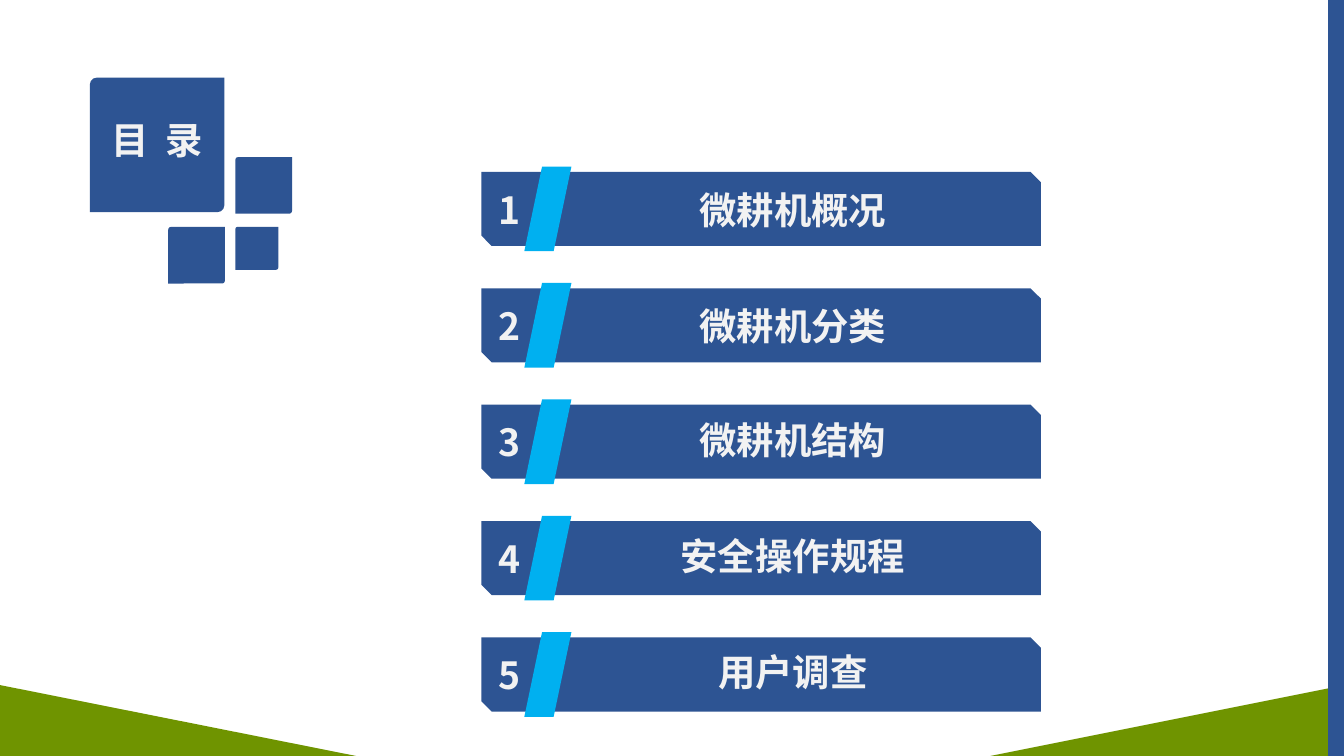
from lxml import etree
from pptx import Presentation
from pptx.dml.color import RGBColor
from pptx.enum.shapes import MSO_SHAPE
from pptx.enum.text import MSO_ANCHOR, PP_ALIGN
from pptx.oxml.ns import qn
from pptx.util import Cm, Pt

TRIANGLE = MSO_SHAPE.RIGHT_TRIANGLE
ROUNDED = MSO_SHAPE.ROUND_2_DIAG_RECTANGLE
SNIPPED = MSO_SHAPE.SNIP_2_DIAG_RECTANGLE
SLANT = MSO_SHAPE.PARALLELOGRAM
RECTANGLE = MSO_SHAPE.RECTANGLE
CENTER = PP_ALIGN.CENTER
TOP = MSO_ANCHOR.TOP

FONT = "Noto Sans CJK SC"
BLUE, CYAN, GREEN, PALE = "2D5493", "00B0F0", "6F9400", "F2F2F2"

# left, top, side in cm
SQUARES = [
    (1.7, 1.47, 2.54),
    (4.45, 4.29, 0.81),
    (3.18, 4.29, 1.07),
    (4.45, 2.97, 1.07),
]
# chapter name, distance of its text box below the top of the bar in cm
CHAPTERS = [
    ("微耕机概况", 0.18),
    ("微耕机分类", 0.18),
    ("微耕机结构", 0.13),
    ("安全操作规程", 0.13),
    ("用户调查", 0.13),
]
BAR_LEFT, FIRST_BAR_TOP, BAR_PITCH = 9.1, 3.25, 2.2


def color(hex_value):
    return RGBColor.from_string(hex_value)


def add_block(slide, preset, left, top, width, height, fill, adjustments=()):
    block = slide.shapes.add_shape(
        preset, Cm(left), Cm(top), Cm(width), Cm(height))
    block.shadow.inherit = False
    block.fill.solid()
    block.fill.fore_color.rgb = color(fill)
    block.line.fill.background()
    for index, value in enumerate(adjustments):
        block.adjustments[index] = value
    return block


def format_text(frame):
    """Set the heading style shared by every text on the slide."""
    frame.word_wrap = True
    frame.vertical_anchor = TOP
    frame.margin_left = frame.margin_right = Cm(0.18)
    frame.margin_top = frame.margin_bottom = Cm(0.1)
    paragraph = frame.paragraphs[0]
    paragraph.alignment = CENTER
    font = paragraph.font
    font.size = Pt(20)
    font.bold = True
    font.color.rgb = color(PALE)
    font.name = FONT
    defaults = paragraph._p.pPr.find(qn("a:defRPr"))
    etree.SubElement(defaults, qn("a:ea"), typeface=FONT)


def add_label(slide, text, left, top, width):
    label = slide.shapes.add_textbox(Cm(left), Cm(top), Cm(width), Cm(1.04))
    label.text_frame.text = text
    format_text(label.text_frame)


def add_title(slide):
    title = slide.shapes.title
    title.left, title.top = Cm(1.7), Cm(2.11)
    title.width, title.height = Cm(2.54), Cm(1.04)
    title.text_frame.text = "目 录"
    format_text(title.text_frame)
    run = title.text_frame.paragraphs[0].runs[0]
    run._r.get_or_add_rPr().set("spc", "220")
    # Bring the title in front of the square
    slide.shapes._spTree.append(title._element)


def add_chapter(slide, number, name, name_offset):
    top = FIRST_BAR_TOP + (number - 1) * BAR_PITCH
    add_block(slide, SNIPPED, BAR_LEFT, top, 10.57, 1.4, BLUE, (0, 0.138))
    add_block(slide, SLANT, BAR_LEFT + 0.81, top - 0.1, 0.89, 1.6, CYAN,
              (0.377,))
    add_label(slide, str(number), BAR_LEFT, top + 0.18, 1.07)
    add_label(slide, name, BAR_LEFT + 3.37, top + name_offset, 5.03)


def add_scenery(slide):
    add_block(slide, TRIANGLE, 0, 12.95, 6.73, 1.34, GREEN)
    right_hill = add_block(slide, TRIANGLE, 18.72, 12.95, 6.7, 1.34, GREEN)
    right_hill._element.spPr.xfrm.set("flipH", "1")
    add_block(slide, RECTANGLE, 25.1, 0, 0.3, 14.29, BLUE)


def main():
    presentation = Presentation()
    presentation.slide_width = Cm(25.4)
    presentation.slide_height = Cm(14.29)
    slide = presentation.slides.add_slide(presentation.slide_layouts[5])

    add_scenery(slide)
    for left, top, side in SQUARES:
        add_block(slide, ROUNDED, left, top, side, side, BLUE, (0.049, 0))
    add_title(slide)
    for number, (name, name_offset) in enumerate(CHAPTERS, start=1):
        add_chapter(slide, number, name, name_offset)

    presentation.save("out.pptx")


if __name__ == "__main__":
    main()
